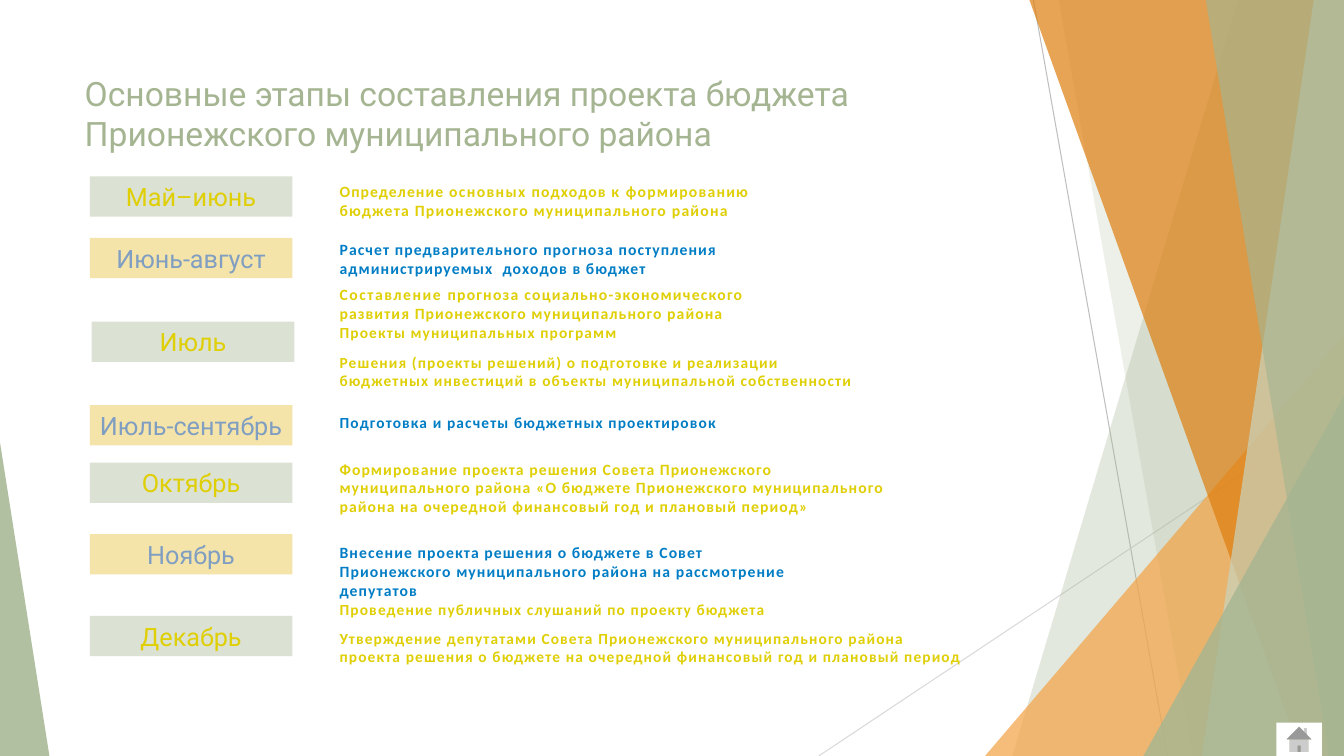
from lxml.etree import SubElement
from pptx import Presentation
from pptx.dml.color import RGBColor
from pptx.enum.shapes import MSO_CONNECTOR, MSO_SHAPE
from pptx.enum.text import MSO_ANCHOR, PP_ALIGN
from pptx.oxml.ns import qn
from pptx.util import Inches, Pt

SAGE = RGBColor(0xA5, 0xB5, 0x92)
PALE_SAGE = RGBColor(0xC9, 0xD3, 0xBE)
LIGHT_SAGE = RGBColor(0xDB, 0xE1, 0xD3)
SAND = RGBColor(0xF5, 0xE4, 0xA9)
ORANGE = RGBColor(0xF3, 0xA4, 0x47)
DARK_ORANGE = RGBColor(0xDD, 0x7E, 0x0E)
YELLOW = RGBColor(0xDF, 0xCF, 0x04)
BLUE = RGBColor(0x00, 0x7D, 0xC5)
STEEL = RGBColor(0x80, 0x9E, 0xC2)
GRAY = RGBColor(0xBF, 0xBF, 0xBF)
LIGHT_GRAY = RGBColor(0xD9, 0xD9, 0xD9)
WHITE = RGBColor(0xFF, 0xFF, 0xFF)

WIDTH, HEIGHT = 13.33, 7.5
TASK_LEFT = 3.27

TITLE = "Основные этапы составления проекта бюджета Прионежского муниципального района"

# left, top, label
MONTHS = [
    (0.89, 1.75, "Май–июнь"),
    (0.89, 2.36, "Июнь-август"),
    (0.91, 3.19, "Июль"),
    (0.89, 4.02, "Июль-сентябрь"),
    (0.89, 4.59, "Октябрь"),
    (0.89, 5.3, "Ноябрь"),
    (0.89, 6.11, "Декабрь"),
]

# top, width, height, size, colour, runs of (text, letter spacing in points)
TASKS = [
    (1.76, 4.95, 0.4, 11.2, YELLOW, [
        ("Определение ", 0.8), ("основных ", 1), ("подходов ", 0.8), ("к ", 1.1),
        ("формированию бюджета Прионежского муниципального района", 0.9)]),
    (2.33, 4.95, 0.4, 11.2, BLUE, [
        ("Расчет предварительного прогноза поступления "
         "администрируемых  доходов в бюджет", 0.8)]),
    (2.78, 4.95, 0.41, 11.2, YELLOW, [
        ("Составление ", 1.1), ("прогноза социально-экономического ", 0.9),
        ("развития Прионежского муниципального района", 0.8)]),
    (3.16, 4.95, 0.29, 11, YELLOW, [("Проекты муниципальных программ", 0.8)]),
    (3.45, 5.46, 0.45, 11, YELLOW, [
        ("Решения (проекты решений) о подготовке и реализации бюджетных "
         "инвестиций в объекты муниципальной собственности", 0.8)]),
    (4.05, 4.95, 0.34, 11, BLUE, [
        ("Подготовка и расчеты бюджетных проектировок", 0.8)]),
    (4.51, 5.65, 0.7, 11.2, YELLOW, [
        ("Формирование проекта решения Совета Прионежского муниципального "
         "района «О бюджете Прионежского муниципального района на очередной "
         "финансовый год и плановый период»", 0.8)]),
    (5.34, 4.95, 0.4, 11.2, BLUE, [
        ("Внесение проекта решения о бюджете в Совет Прионежского "
         "муниципального района на рассмотрение депутатов", 0.8)]),
    (5.9, 4.95, 0.29, 11, YELLOW, [
        ("Проведение публичных слушаний по проекту бюджета", 0.8)]),
    (6.19, 6.4, 0.47, 11, YELLOW, [
        ("Утверждение депутатами Совета Прионежского муниципального района "
         "проекта решения о бюджете на очередной финансовый год и плановый "
         "период", 0.8)]),
]


def apply(obj, values):
    for name, value in values.items():
        setattr(obj, name, value)


class SlideBuilder:
    title_font = {"name": "Roboto", "size": Pt(24), "bold": False}
    month_font = {"name": "Roboto", "size": Pt(18)}
    task_font = {"name": "Calibri", "bold": True}

    def __init__(self, slide):
        self.s = slide

    def place(self, sp, *box):
        names = ("left", "top", "width", "height")
        apply(sp, {n: Inches(v) for n, v in zip(names, box)})

    def paint(self, sp, color, opacity=100):
        sp.shadow.inherit = False
        sp.line.fill.background()
        sp.fill.solid()
        sp.fill.fore_color.rgb = color
        if opacity < 100:
            clr = sp._element.spPr.find(qn("a:solidFill"))[0]
            SubElement(clr, qn("a:alpha"), val=str(opacity * 1000))

    def add_text(self, p, text, font, color, spacing=0):
        r = p.add_run()
        r.text = text
        apply(r.font, font)
        r.font.color.rgb = color
        if spacing:
            r._r.get_or_add_rPr().set("spc", str(round(spacing * 100)))

    def title(self, text, *box):
        sp = self.s.shapes.title
        self.place(sp, *box)
        apply(sp.text_frame, {"word_wrap": True, "vertical_anchor": MSO_ANCHOR.TOP})
        p = sp.text_frame.paragraphs[0]
        p.alignment = PP_ALIGN.LEFT
        self.add_text(p, text, self.title_font, SAGE)

    def line(self, x1, y1, x2, y2, color):
        sp = self.s.shapes.add_connector(
            MSO_CONNECTOR.STRAIGHT, *map(Inches, (x1, y1, x2, y2)))
        sp.line.color.rgb = color
        sp.line.width = Pt(0.75)
        SubElement(sp._element.spPr, qn("a:effectLst"))

    def band(self, top_x, bottom_x, color, opacity):
        """Fill the slide from a slanted left edge to the right border."""
        corners = [(top_x, 0), (WIDTH, 0), (WIDTH, HEIGHT), (bottom_x, HEIGHT)]
        start, *rest = [(Inches(x), Inches(y)) for x, y in corners]
        fb = self.s.shapes.build_freeform(*start)
        fb.add_line_segments(rest)
        self.paint(fb.convert_to_shape(), color, opacity)

    def shape(self, kind, box, color, opacity=100):
        sp = self.s.shapes.add_shape(kind, *map(Inches, box))
        self.paint(sp, color, opacity)
        return sp

    def triangle(self, box, apex, color, opacity):
        sp = self.shape(MSO_SHAPE.ISOSCELES_TRIANGLE, box, color, opacity)
        sp.adjustments[0] = apex

    def month(self, left, top, text, fill, color):
        sp = self.shape(MSO_SHAPE.RECTANGLE, (left, top, 2.01, 0.4), fill)
        tf = sp.text_frame
        apply(tf, {"word_wrap": True, "vertical_anchor": MSO_ANCHOR.MIDDLE,
                   "margin_left": Inches(0.05), "margin_right": Inches(0.05)})
        p = tf.paragraphs[0]
        p.alignment = PP_ALIGN.CENTER
        self.add_text(p, text, self.month_font, color)

    def task(self, top, width, height, size, color, runs):
        sp = self.s.shapes.add_textbox(
            *map(Inches, (TASK_LEFT, top, width, height)))
        tf = sp.text_frame
        tf.word_wrap = True
        font = {**self.task_font, "size": Pt(size)}
        for text, spacing in runs:
            self.add_text(tf.paragraphs[0], text, font, color, spacing)


def main():
    prs = Presentation()
    prs.slide_width, prs.slide_height = Inches(WIDTH), Inches(HEIGHT)
    b = SlideBuilder(prs.slides.add_slide(prs.slide_layouts[5]))

    b.line(10.25, 0, 11.58, HEIGHT, GRAY)
    b.line(WIDTH, 4.03, 8.12, HEIGHT, LIGHT_GRAY)
    b.band(12.28, 10.04, SAGE, 30)
    b.band(10.5, 11.83, SAGE, 20)
    b.triangle((9.77, 3.33, 3.56, 4.17), 1, ORANGE, 72)
    b.band(10.21, 12.91, DARK_ORANGE, 70)
    b.band(13.03, 11.92, PALE_SAGE, 70)
    b.band(11.96, 13.18, SAGE, 65)
    b.triangle((11.34, 3.93, 1.99, 3.57), 1, SAGE, 80)
    b.triangle((0, 4.39, 0.49, 3.11), 0, SAGE, 85)

    b.title(TITLE, 0.74, 0.67, 9.4, 0.93)
    b.shape(MSO_SHAPE.ACTION_BUTTON_HOME, (12.66, 7.17, 0.45, 0.33), WHITE)
    schemes = [(LIGHT_SAGE, YELLOW), (SAND, STEEL)]
    for i, month in enumerate(MONTHS):
        b.month(*month, *schemes[i % 2])
    for task in TASKS:
        b.task(*task)

    prs.save("out.pptx")


if __name__ == "__main__":
    main()
